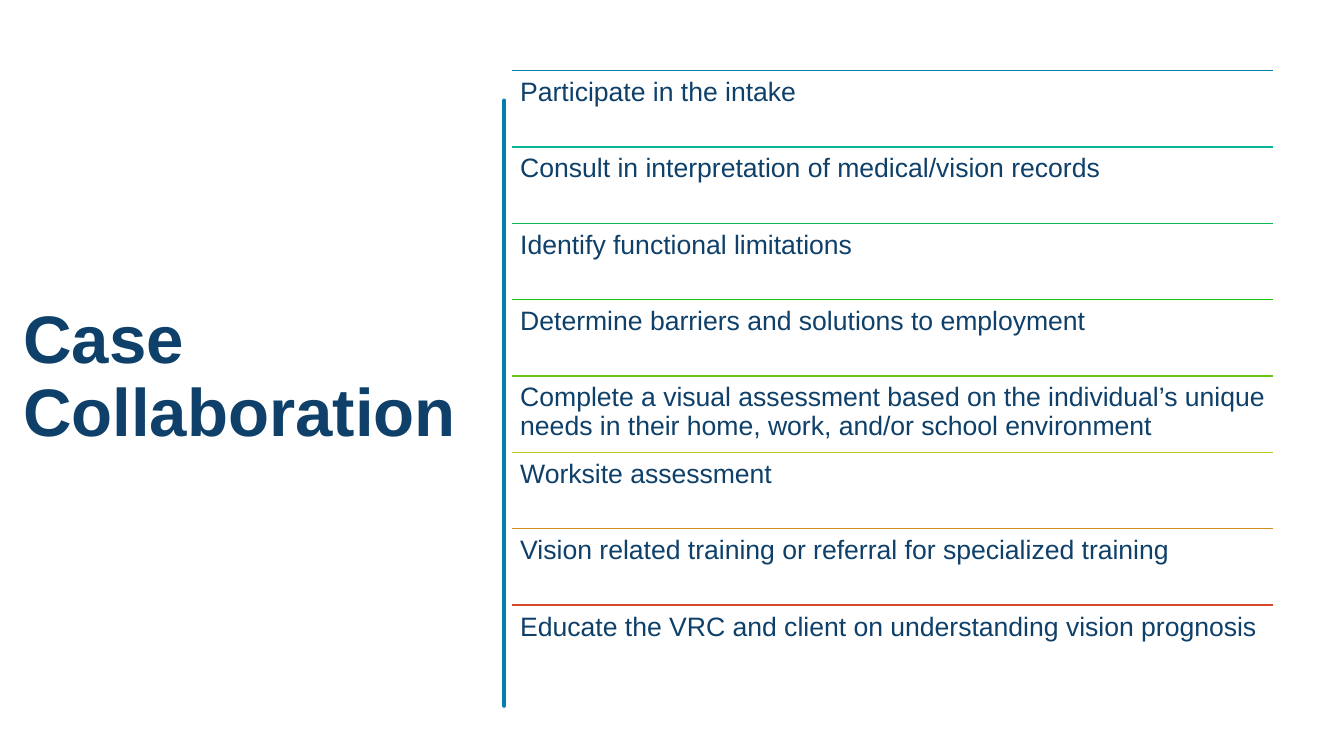
from lxml.etree import SubElement
from pptx import Presentation
from pptx.dml.color import RGBColor
from pptx.enum.shapes import MSO_CONNECTOR
from pptx.enum.text import MSO_ANCHOR, PP_ALIGN
from pptx.oxml.ns import qn
from pptx.util import Inches, Pt

NAVY = "0E406A"
BLUE = "037FAE"

TASKS = [
    ("Participate in the intake", BLUE),
    ("Consult in interpretation of medical/vision records", "07B598"),
    ("Identify functional limitations", "0BBB51"),
    ("Determine barriers and solutions to employment", "18C010"),
    ("Complete a visual assessment based on the individual’s unique needs "
     "in their home, work, and/or school environment", "6AC615"),
    ("Worksite assessment", "BDCA1B"),
    ("Vision related training or referral for specialized training", "CF9021"),
    ("Educate the VRC and client on understanding vision prognosis", "D34927"),
]

# Offsets (x, y) from the top left of the brush stroke, in inches
RIGHT_EDGE = [(0.03, 0), (0.04, 0.3), (0.03, 0.62), (0.03, 1.42), (0.03, 2.1),
              (0.04, 2.5), (0.03, 2.72), (0.04, 3.2), (0.03, 3.52), (0.02, 3.8),
              (0.03, 4.26), (0.04, 4.6), (0.03, 5), (0.03, 5.92)]
LEFT_EDGE = [(0.01, 5.92), (0.01, 5.3), (0, 4.9), (0.01, 4.55), (0, 4.1),
             (0, 3.75), (0.01, 3.31), (0.01, 3), (0, 2.75), (0.01, 2.2),
             (0.01, 1.66), (0, 1.1), (0, 0.8), (0.02, 0.4), (0.01, 0)]


def rgb(hex_color):
    return RGBColor.from_string(hex_color)


def format_text(frame, size, bold=False):
    frame.word_wrap = True
    for paragraph in frame.paragraphs:
        paragraph.alignment = PP_ALIGN.LEFT
        paragraph.line_spacing = 0.9
        for run in paragraph.runs:
            run.font.name = "Arial"
            run.font.size = Pt(size)
            run.font.bold = bold
            run.font.color.rgb = rgb(NAVY)


def place_title(slide, left, top, width, height):
    title = slide.shapes.title
    title.left, title.top = Inches(left), Inches(top)
    title.width, title.height = Inches(width), Inches(height)
    title.text_frame.text = "Case Collaboration"
    title.text_frame.vertical_anchor = MSO_ANCHOR.MIDDLE
    format_text(title.text_frame, 48, bold=True)


def add_brush_stroke(slide, left, top):
    """Draw the uneven vertical divider."""
    outline = [(left + x, top + y) for x, y in RIGHT_EDGE + LEFT_EDGE]
    builder = slide.shapes.build_freeform(*outline[0], scale=Inches(1))
    builder.add_line_segments(outline[1:], close=True)
    stroke = builder.convert_to_shape()
    stroke.shadow.inherit = False
    stroke.fill.solid()
    stroke.fill.fore_color.rgb = rgb(BLUE)
    stroke.line.color.rgb = rgb(BLUE)
    stroke.line.width = Pt(3.25)


def add_task(slide, task, color, left, top, width, height):
    """Add one list row: a coloured rule with its text below."""
    rule = slide.shapes.add_connector(
        MSO_CONNECTOR.STRAIGHT, Inches(left), Inches(top),
        Inches(left + width), Inches(top))
    rule.line.color.rgb = rgb(color)
    rule.line.width = Pt(1)
    SubElement(rule._element.spPr, qn("a:effectLst"))

    label = slide.shapes.add_textbox(
        Inches(left), Inches(top), Inches(width), Inches(height))
    frame = label.text_frame
    frame.margin_left = frame.margin_right = Inches(0.08)
    frame.margin_top = frame.margin_bottom = Inches(0.08)
    frame.text = task
    format_text(frame, 19)


def add_task_list(slide, left, top, width, height):
    row_height = height / len(TASKS)
    for row, (task, color) in enumerate(TASKS):
        add_task(slide, task, color, left, top + row * row_height,
                 width, row_height)


def main():
    prs = Presentation()
    prs.slide_width, prs.slide_height = Inches(13.33), Inches(7.5)
    slide = prs.slides.add_slide(prs.slide_layouts[5])
    place_title(slide, 0.13, 0.7, 4.6, 6.11)
    add_brush_stroke(slide, 4.72, 0.84)
    add_task_list(slide, 5.08, 0.7, 7.55, 6.06)
    prs.save("out.pptx")


if __name__ == "__main__":
    main()
